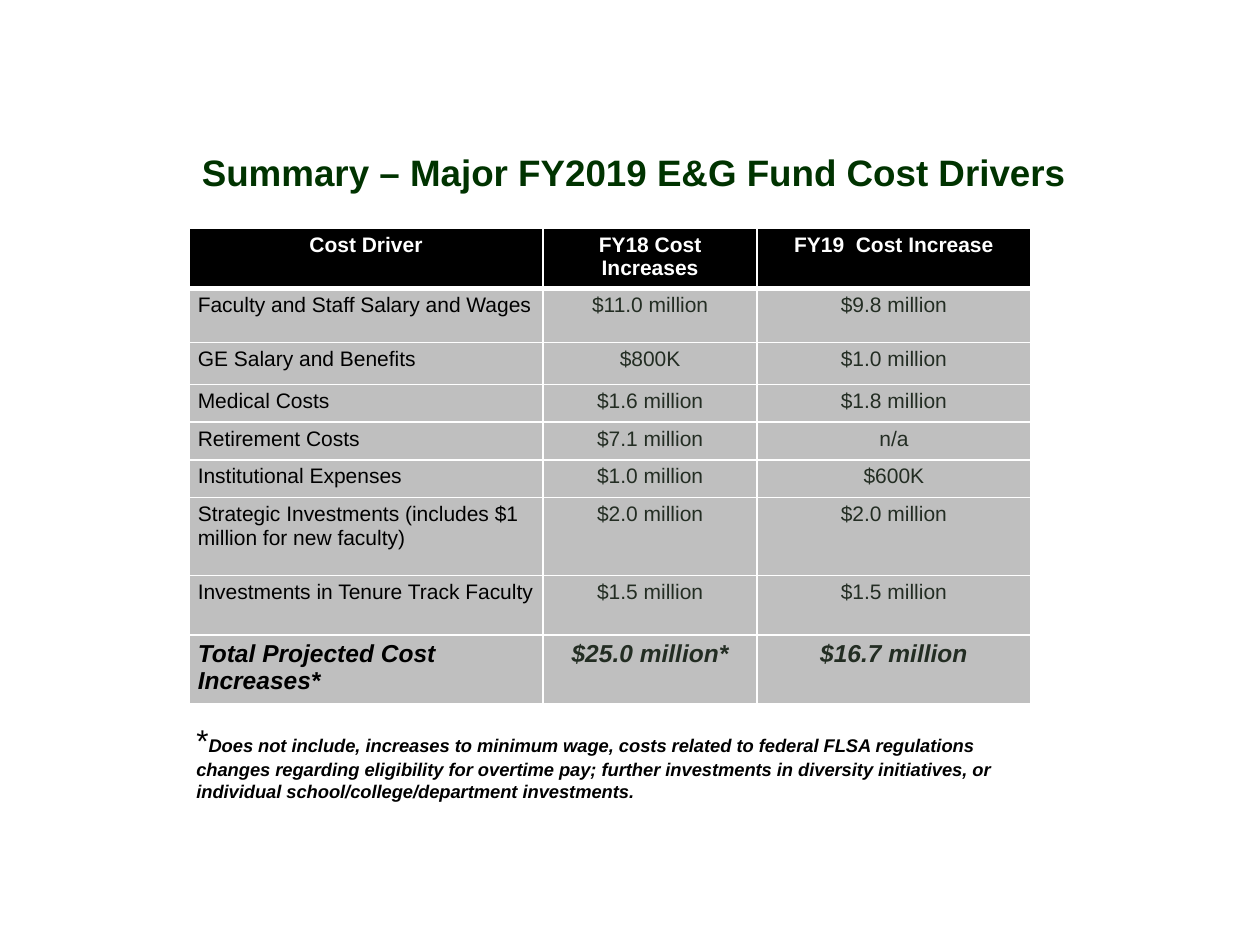
import pptx
import pptx.dml.color
import pptx.enum.text
import pptx.oxml.ns
import pptx.util
from lxml import etree

Inches = pptx.util.Inches
Pt = pptx.util.Pt
RGBColor = pptx.dml.color.RGBColor
ALIGN = pptx.enum.text.PP_ALIGN
ANCHOR = pptx.enum.text.MSO_ANCHOR
qn = pptx.oxml.ns.qn

FONT = "Arial"
GREEN = RGBColor(0x00, 0x33, 0x00)
BLACK = RGBColor(0x00, 0x00, 0x00)
WHITE = RGBColor(0xFF, 0xFF, 0xFF)
GRAY = RGBColor(0xBF, 0xBF, 0xBF)
DARK = RGBColor(0x23, 0x2D, 0x23)

COL_WIDTHS = [2.81, 1.7, 2.17]
ROW_HEIGHTS = [0.47, 0.43, 0.33, 0.3, 0.3, 0.3, 0.62, 0.47, 0.53]
COSTS = [
    ("Cost Driver", "FY18 Cost Increases", "FY19  Cost Increase"),
    ("Faculty and Staff Salary and Wages", "$11.0 million", "$9.8 million"),
    ("GE Salary and Benefits", "$800K", "$1.0 million"),
    ("Medical Costs", "$1.6 million", "$1.8 million"),
    ("Retirement Costs", "$7.1 million", "n/a"),
    ("Institutional Expenses", "$1.0 million", "$600K"),
    ("Strategic Investments (includes $1 million for new faculty)",
     "$2.0 million", "$2.0 million"),
    ("Investments in Tenure Track Faculty", "$1.5 million", "$1.5 million"),
    ("Total Projected Cost Increases*", "$25.0 million*", "$16.7 million"),
]
FOOTNOTE = (
    "Does not include, increases to minimum wage, costs related to federal "
    "FLSA regulations changes regarding eligibility for overtime pay; further "
    "investments in diversity initiatives, or individual "
    "school/college/department investments."
)


def add_run(p, text, size, color, bold=False, italic=False):
    r = p.add_run()
    r.text = text
    r.font.name = FONT
    r.font.size = Pt(size)
    r.font.color.rgb = color
    r.font.bold = bold
    r.font.italic = italic


def add_text_box(slide, left, top, width, height, wrap=True):
    tf = slide.shapes.add_textbox(
        Inches(left), Inches(top), Inches(width), Inches(height)).text_frame
    tf.word_wrap = wrap
    return tf


def set_borders(cell, top, bottom):
    """Draw white cell borders; the side borders are 1 pt wide."""
    tc_pr = cell._tc.get_or_add_tcPr()
    for side, width in (("L", 1), ("R", 1), ("T", top), ("B", bottom)):
        ln = etree.SubElement(tc_pr, qn(f"a:ln{side}"), w=str(Pt(width)))
        fill = etree.SubElement(ln, qn("a:solidFill"))
        etree.SubElement(fill, qn("a:srgbClr"), val=str(WHITE))


def fill_cell(cell, text, row, col):
    is_header = row == 0
    is_total = row == len(COSTS) - 1
    set_borders(cell, 3 if row == 1 else 1, 3 if is_header else 1)
    cell.fill.solid()
    cell.fill.fore_color.rgb = BLACK if is_header else GRAY
    cell.margin_left = cell.margin_right = Inches(0.07)
    cell.margin_top = cell.margin_bottom = Inches(0.04)
    p = cell.text_frame.paragraphs[0]
    p.alignment = ALIGN.LEFT if col == 0 and not is_header else ALIGN.CENTER
    color = WHITE if is_header else BLACK if col == 0 else DARK
    add_run(p, text, 14 if is_total else 12, color,
            bold=is_header or is_total, italic=is_total)


def add_cost_table(slide):
    table = slide.shapes.add_table(
        len(COSTS), len(COL_WIDTHS), Inches(1.5), Inches(1.81),
        Inches(sum(COL_WIDTHS)), Inches(sum(ROW_HEIGHTS))).table
    for column, width in zip(table.columns, COL_WIDTHS):
        column.width = Inches(width)
    for row, height in zip(table.rows, ROW_HEIGHTS):
        row.height = Inches(height)
    for i, texts in enumerate(COSTS):
        for j, text in enumerate(texts):
            fill_cell(table.cell(i, j), text, i, j)


def add_title(slide):
    tf = add_text_box(slide, 1.5, 0.91, 7.06, 0.91, wrap=False)
    tf.vertical_anchor = ANCHOR.MIDDLE
    p = tf.paragraphs[0]
    p.alignment = ALIGN.CENTER
    add_run(p, "Summary – Major FY2019 E&G Fund Cost Drivers", 21, GREEN, bold=True)


def add_footnote(slide):
    p = add_text_box(slide, 1.46, 5.67, 6.95, 0.76).paragraphs[0]
    add_run(p, "*", 18, BLACK)
    add_run(p, FOOTNOTE, 10.5, BLACK, bold=True, italic=True)


def main():
    prs = pptx.Presentation()
    prs.slide_width = Inches(10)
    prs.slide_height = Inches(7.5)
    slide = prs.slides.add_slide(prs.slide_layouts[6])
    add_title(slide)
    add_cost_table(slide)
    add_footnote(slide)
    prs.save("out.pptx")


if __name__ == "__main__":
    main()
